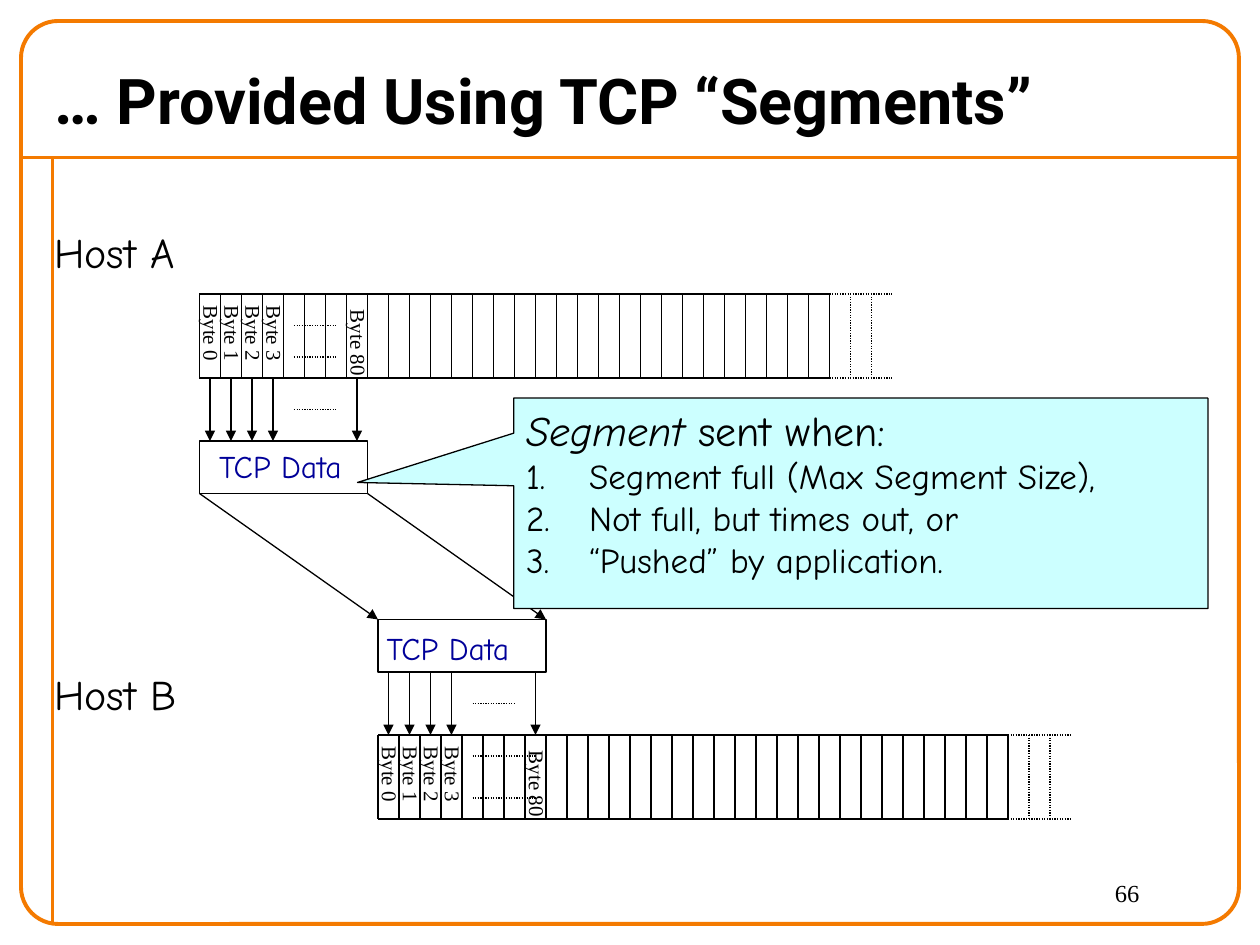
from lxml.etree import SubElement
from pptx import Presentation
from pptx.dml.color import RGBColor
from pptx.enum.dml import MSO_LINE
from pptx.enum.shapes import MSO_CONNECTOR, MSO_SHAPE
from pptx.enum.text import MSO_ANCHOR
from pptx.oxml.ns import qn
from pptx.util import Inches, Pt

presentation = Presentation()
presentation.slide_width = Inches(10)
presentation.slide_height = Inches(7.5)
slide = presentation.slides.add_slide(presentation.slide_layouts[6])
UNIT = presentation.slide_width / 60  # the slide is 60 columns by 45 rows
color = RGBColor.from_string


def add_line(x1, y1, x2, y2, line_color="000000", width=0.75, dotted=False, arrow=False):
    points = [round(value * UNIT) for value in (x1, y1, x2, y2)]
    line = slide.shapes.add_connector(MSO_CONNECTOR.STRAIGHT, *points)
    line.line.color.rgb = color(line_color)
    line.line.width = Pt(width)
    if dotted:
        line.line.dash_style = MSO_LINE.ROUND_DOT
    if arrow:
        SubElement(line.line._get_or_add_ln(), qn("a:tailEnd"), type="triangle")
    SubElement(line._element.spPr, qn("a:effectLst"))


def add_text(text, x, y, width, height, size, font_name, text_color="000000",
             bold=False, rotation=0, wrap=True):
    box = slide.shapes.add_textbox(*[round(value * UNIT) for value in (x, y, width, height)])
    box.rotation = rotation
    box.text_frame.word_wrap = wrap
    box.text_frame.vertical_anchor = MSO_ANCHOR.MIDDLE if bold else MSO_ANCHOR.TOP
    paragraph = box.text_frame.paragraphs[0]
    paragraph.text = text
    paragraph.font.size = Pt(size)
    paragraph.font.name = font_name
    paragraph.font.bold = bold
    paragraph.font.color.rgb = color(text_color)


# Frame, rules, title and page number
add_line(1, 7.5, 59, 7.5, "F47A00", 2.25)
add_line(2.5, 7.5, 2.5, 44, "F47A00", 2.25)
frame = slide.shapes.add_shape(
    MSO_SHAPE.ROUNDED_RECTANGLE, *[round(value * UNIT) for value in (1, 1, 58, 43)])
frame.adjustments[0] = 0.041
frame.shadow.inherit = False
frame.fill.background()
frame.line.color.rgb = color("F47A00")
frame.line.width = Pt(2.25)
add_text("66", 52.5, 41.5, 6, 2.5, 14, "Times New Roman")
add_text("… Provided Using TCP “Segments”", 2, 2.5, 57, 4.5, 36, "Roboto", bold=True)

# Byte streams: name, label row, left column, top row, data box row, data text place,
# arrow start and end rows, length of the dotted gaps, rows of the dotted gaps
CELLS, STREAM_HEIGHT, BOX_WIDTH, BOX_HEIGHT = 30, 4, 8, 2.5
LABEL_LENGTH, LABEL_HEIGHT = 5, 1.8
hosts = [
    ("Host A", 10.5, 9.5, 14, 21, (9.84, 21), (18, 21), 2, (15.5, 17)),
    ("Host B", 31.56, 18, 35, 29.5, (17.82, 29.64), (32, 35), 3, (36, 38)),
]
byte_columns = {0: "Byte 0", 1: "Byte 1", 2: "Byte 2", 3: "Byte 3", 7: "Byte 80"}
for name, label_row, left, top, box_row, data_place, arrow_rows, gap, gap_rows in hosts:
    add_text(name, 2, label_row, 7.8, 3, 24, "Comic Neue", wrap=False)

    # Stream cells, trailing off in dots
    right, bottom = left + CELLS, top + STREAM_HEIGHT
    for row in (top, bottom):
        add_line(left, row, right, row)
        add_line(right, row, right + 3, row, dotted=True)
    for cell in range(CELLS + 3):
        add_line(left + cell, top, left + cell, bottom, dotted=cell > CELLS)
    for row in gap_rows:
        add_line(left + 4.5, row, left + 4.5 + gap, row, dotted=True)

    # Data box
    data_box = slide.shapes.add_shape(
        MSO_SHAPE.RECTANGLE,
        *[round(value * UNIT) for value in (left, box_row, BOX_WIDTH, BOX_HEIGHT)])
    data_box.shadow.inherit = False
    data_box.fill.solid()
    data_box.fill.fore_color.rgb = color("FFFFFF")
    data_box.line.color.rgb = color("000000")
    data_box.line.width = Pt(0.75)
    add_text("TCP Data", *data_place, 7.68, 2.4, 18, "Comic Neue", "000099")

    # Byte labels, each turned about its middle, and arrows
    for column, label in byte_columns.items():
        middle = top + (2.67 if column == 7 else 2.46)
        add_text(label, left + column + 0.58 - LABEL_LENGTH / 2, middle - LABEL_HEIGHT / 2,
                 LABEL_LENGTH, LABEL_HEIGHT, 12, "Times New Roman", rotation=89.8)
        center = left + column + 0.5
        add_line(center, arrow_rows[0], center, arrow_rows[1], arrow=True)
    gap_row = sum(arrow_rows) / 2
    add_line(left + 4.5, gap_row, left + 6.5, gap_row, dotted=True)

# Segment travelling from host A to host B
for offset in (0, BOX_WIDTH):
    add_line(9.5 + offset, 23.5, 18 + offset, 29.5, arrow=True)

# Callout
callout = slide.shapes.add_shape(
    MSO_SHAPE.RECTANGULAR_CALLOUT, *[round(value * UNIT) for value in (24.46, 18.96, 33.06, 10.02)])
callout.adjustments[0], callout.adjustments[1] = -0.725, -0.099
callout.shadow.inherit = False
callout.fill.solid()
callout.fill.fore_color.rgb = color("CCFFFF")
callout.line.color.rgb = color("000000")
callout.line.width = Pt(0.75)
callout_text = callout.text_frame
callout_text.word_wrap = True
callout_text.vertical_anchor = MSO_ANCHOR.TOP
heading = callout_text.paragraphs[0]
segment = heading.add_run()
segment.text = "Segment"
segment.font.italic = True
heading.add_run().text = " sent when:"
for reason in ("Segment full (Max Segment Size),", "Not full, but times out, or",
               "“Pushed” by application."):
    callout_text.add_paragraph().text = reason
for number, paragraph in enumerate(callout_text.paragraphs):
    paragraph.font.size = Pt(20 if number else 24)
    paragraph.font.name = "Comic Neue"
    paragraph.font.color.rgb = color("000000")
    properties = paragraph._p.get_or_add_pPr()
    properties.set("algn", "l")
    properties.set("marL", str(Inches(0.5)))
    properties.set("indent", str(-Inches(0.5)))
    if number:
        numbering = properties.makeelement(qn("a:buAutoNum"), {"type": "arabicPeriod"})
        properties.insert(0, numbering)

presentation.save("out.pptx")
